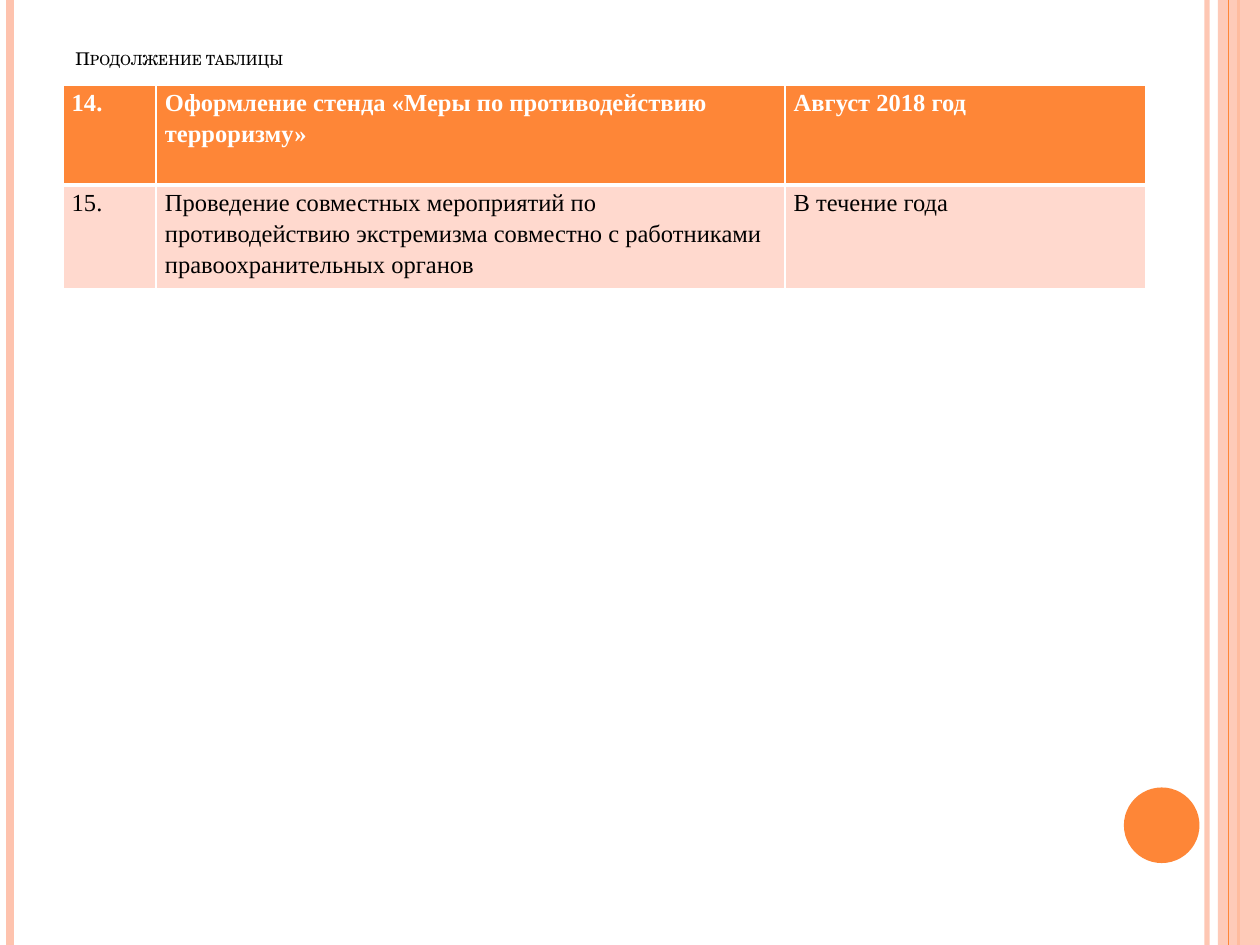
"""Build the slide with the continued table of anti-terrorism measures."""
from lxml import etree
from pptx import Presentation
from pptx import util as u
from pptx.dml import color
from pptx.enum import shapes, text
from pptx.oxml import ns

THEME = {
    "orange": "FE8637", "peach": "FEC3AE", "pale": "FFD9CE",
    "white": "FFFFFF", "black": "000000",
    "title": {"name": "TeX Gyre Schola", "size": u.Pt(10)},
    "head": {"name": "Times New Roman", "size": u.Pt(14), "bold": True},
    "body": {"name": "Times New Roman", "size": u.Pt(14), "bold": False},
}


def style(font, fmt, col):
    for key, value in THEME[fmt].items():
        setattr(font, key, value)
    font.color.rgb = color.RGBColor.from_string(THEME[col])


def paint(fill, col, opacity=100):
    fill.solid()
    fill.fore_color.rgb = color.RGBColor.from_string(THEME[col])
    if opacity < 100:
        clr = next(fill._xPr.iter(ns.qn("a:srgbClr")))
        etree.SubElement(clr, ns.qn("a:alpha"), val=str(opacity * 1000))


prs = Presentation()
prs.slide_width, prs.slide_height = u.Pt(720), u.Pt(540)
s = prs.slides.add_slide(prs.slide_layouts[6])

band = (shapes.MSO_SHAPE.RECTANGLE, 696, 0, 24, 540, "peach", 87)
disc = (shapes.MSO_SHAPE.OVAL, 642.24, 450, 43.2, 43.2, "orange", 100)
rules = [
    (689.76, "peach", 3, 93), (5.76, "peach", 4.5, 100), (707.76, "orange", 1.5, 100),
    band, (702, "orange", 0.75, 100), disc,
]
for item in rules:
    if len(item) == 4:
        x, col, width, opacity = item
        sp = s.shapes.add_connector(
            shapes.MSO_CONNECTOR.STRAIGHT, u.Pt(x), 0, u.Pt(x), prs.slide_height)
        sp.line.width = u.Pt(width)
        paint(sp.line.fill, col, opacity)
        etree.SubElement(sp._element.spPr, ns.qn("a:effectLst"))
    else:
        kind, *box, col, opacity = item
        sp = s.shapes.add_shape(kind, *map(u.Pt, box))
        sp.shadow.inherit = False
        sp.line.fill.background()
        paint(sp.fill, col, opacity)

tf = s.shapes.add_textbox(u.Pt(36), u.Pt(21.6), u.Pt(588), u.Pt(21.6)).text_frame
tf.word_wrap = True
tf.vertical_anchor = text.MSO_ANCHOR.BOTTOM
r = tf.paragraphs[0].add_run()
r.text = "Продолжение таблицы"
style(r.font, "title", "black")
r.font._element.set("cap", "small")

rows = [
    ("14.", "Оформление стенда «Меры по противодействию терроризму»", "Август 2018 год"),
    ("15.", "Проведение совместных мероприятий по противодействию экстремизма "
     "совместно с работниками правоохранительных органов", "В течение года"),
]
looks = [("head", "white", "orange", 3), ("body", "black", "pale", 1)]
widths, heights = [53.28, 359.28, 205.92], [56.88, 59.04]
margins = {"margin_left": u.Pt(5), "margin_right": u.Pt(5), "margin_top": 0, "margin_bottom": 0}

table = s.shapes.add_table(
    2, 3, u.Pt(36), u.Pt(48.96), u.Pt(sum(widths)), u.Pt(sum(heights))).table
table.horz_banding = False
for column, width in zip(table.columns, widths):
    column.width = u.Pt(width)
for i, (row, (fmt, ink, back, bottom)) in enumerate(zip(rows, looks)):
    table.rows[i].height = u.Pt(heights[i])
    for j, words in enumerate(row):
        cell = table.cell(i, j)
        for key, value in margins.items():
            setattr(cell, key, value)
        top = looks[i - 1][3] if i else 1
        for side, width in zip("LRTB", (1, 1, top, bottom)):
            ln = etree.SubElement(
                cell._tc.get_or_add_tcPr(), ns.qn(f"a:ln{side}"), w=str(u.Pt(width)))
            solid = etree.SubElement(ln, ns.qn("a:solidFill"))
            etree.SubElement(solid, ns.qn("a:srgbClr"), val=THEME["white"])
        paint(cell.fill, back)
        p = cell.text_frame.paragraphs[0]
        p.line_spacing = 1.15
        r = p.add_run()
        r.text = words
        style(r.font, fmt, ink)

prs.save("out.pptx")
